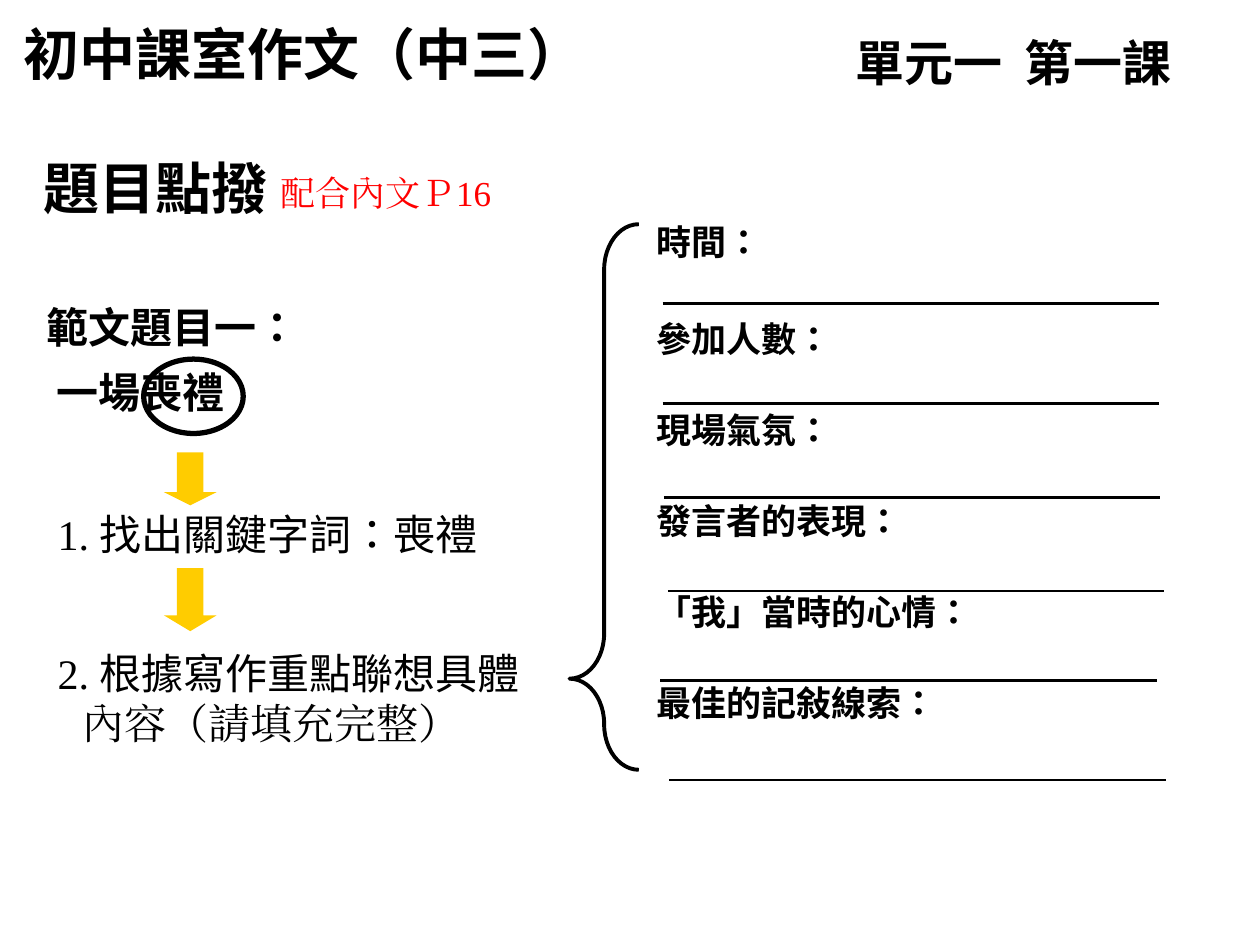
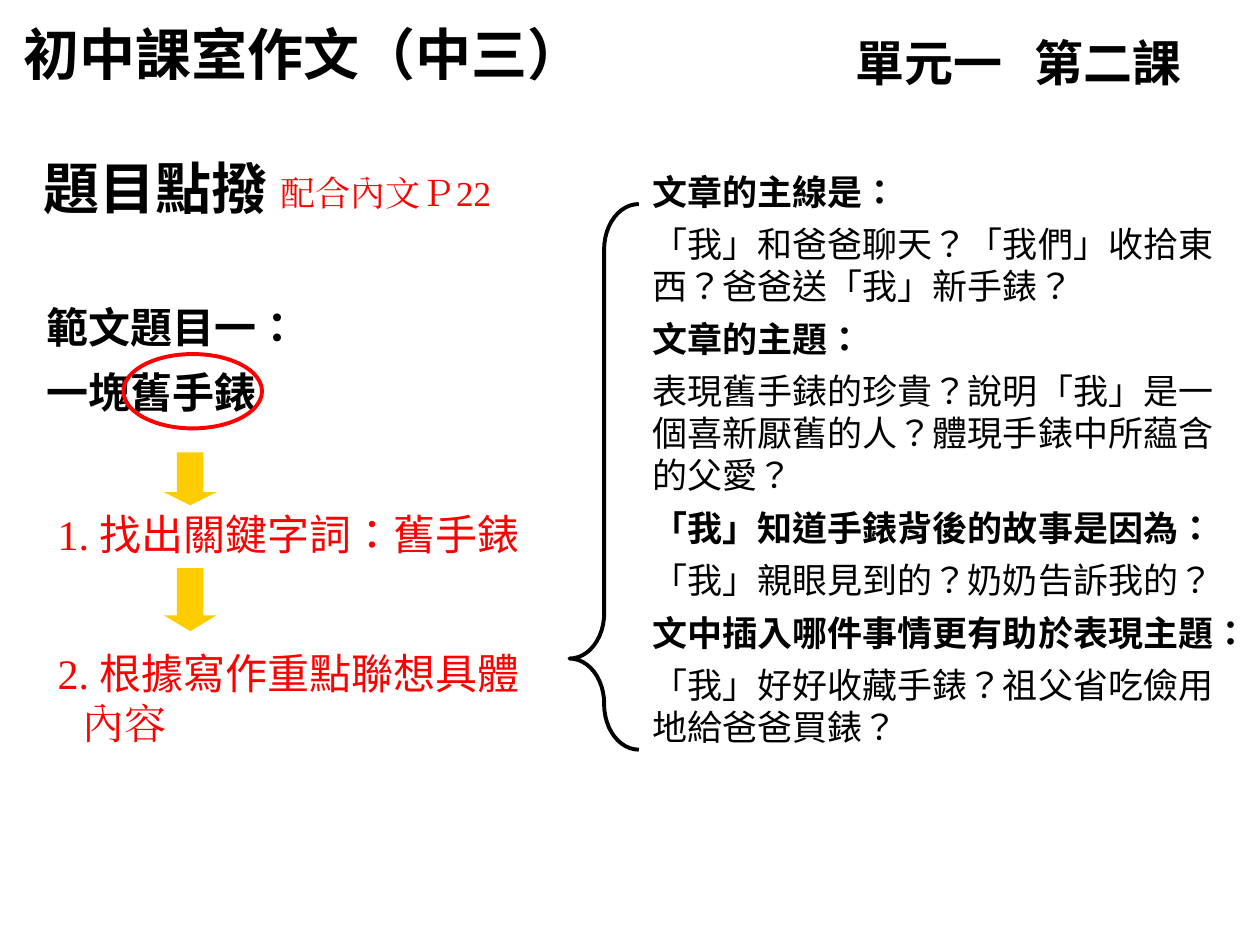
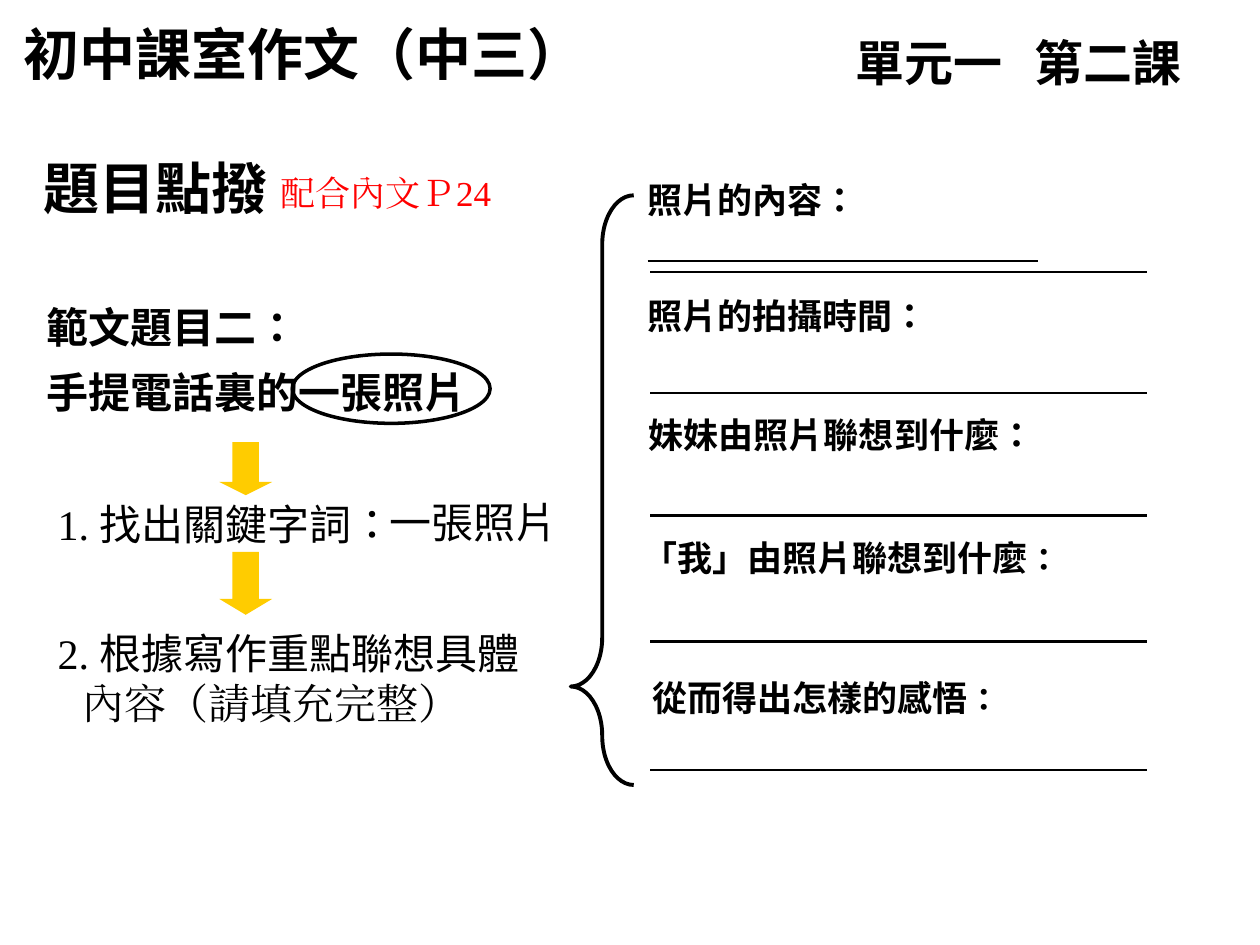
from lxml import etree
from pptx import Presentation
from pptx.dml.color import RGBColor
from pptx.enum.lang import MSO_LANGUAGE_ID
from pptx.enum.shapes import MSO_CONNECTOR, MSO_SHAPE
from pptx.enum.text import PP_ALIGN
from pptx.oxml.ns import qn
from pptx.util import Inches, Pt

# Enum members
OVAL = MSO_SHAPE.OVAL
DOWN = MSO_SHAPE.DOWN_ARROW
BRACE = MSO_SHAPE.LEFT_BRACE
STRAIGHT = MSO_CONNECTOR.STRAIGHT
CENTER = PP_ALIGN.CENTER
CHINESE = MSO_LANGUAGE_ID.TRADITIONAL_CHINESE

# Shared style
BLACK, RED, GOLD = "000000", "FF0000", "FFCC00"
SANS, SERIF, HEAD, TITLE, CJK = (
    "DejaVu Sans", "Times New Roman", "Roboto", "Arial", "Noto Sans CJK TC")
LEADING = 1.2


def rgb(code):
    return RGBColor.from_string(code)


def style(run, size, font, color, bold):
    face = run.font
    face.size, face.bold = Pt(size), bold
    face.color.rgb = rgb(color)
    face.language_id = CHINESE
    face.name = font
    east = etree.SubElement(face._element, qn("a:ea"))
    east.set("typeface", font)


def write(slide, box, lines, size, font=SANS, color=BLACK, bold=False,
          pitch=None):
    """Add a text box with one paragraph per line; return the paragraphs."""
    frame = slide.shapes.add_textbox(*map(Inches, box)).text_frame
    frame.word_wrap = True
    frame.text = "\n".join(lines)
    for para in frame.paragraphs:
        para.line_spacing = Pt(pitch or size * LEADING)
        for run in para.runs:
            style(run, size, font, color, bold)
    return frame.paragraphs


def indent(para, width):
    para._p.get_or_add_pPr().set("marL", str(Inches(width)))


def shape(slide, kind, box, fill=None, line=None, width=0, adjust=()):
    item = slide.shapes.add_shape(kind, *map(Inches, box))
    item.shadow.inherit = False
    if fill:
        item.fill.solid()
        item.fill.fore_color.rgb = rgb(fill)
    else:
        item.fill.background()
    if line:
        item.line.color.rgb = rgb(line)
        item.line.width = Pt(width)
    else:
        item.line.fill.background()
    for i, value in enumerate(adjust):
        item.adjustments[i] = value


def rule(slide, left, top, length=3.94, width=1.5):
    line = slide.shapes.add_connector(
        STRAIGHT, *map(Inches, (left, top, left + length, top)))
    line.line.color.rgb = rgb(BLACK)
    line.line.width = Pt(width)
    etree.SubElement(line._element.spPr, qn("a:effectLst"))


def header(slide, lesson, tab, page):
    write(slide, (0.09, 0.11, 5.22, 0.63), ["初中課室作文（中三）"], 32, HEAD,
          bold=True)
    write(slide, (0.25, 1.17, 3.08, 0.63), ["題目點撥"], 32, TITLE, bold=True)
    unit = write(slide, (6.69, 0.21, 3.35, 0.57), [f"單元一\t{lesson}"], 28,
                 HEAD, bold=True)[0]
    tabs = etree.SubElement(unit._p.get_or_add_pPr(), qn("a:tabLst"))
    etree.SubElement(tabs, qn("a:tab"), pos=str(Inches(tab)), algn="l")
    write(slide, (2.13, 1.31, 2.47, 0.43), [f"配合內文Ｐ{page}"], 20, SERIF,
          RED)


def topic(slide, label, title, oval, color, width):
    """Essay title with its key word circled."""
    paras = write(slide, (0.27, 2.22, 5, 1.14), [label, title], 24, bold=True,
                  pitch=37.5)
    shape(slide, OVAL, oval, line=color, width=width)
    return paras


def step(slide, top, number, lines, color):
    paras = write(slide, (0.36, top, 4.41, 0.5), [number, *lines[1:]], 24,
                  SERIF, color)
    style(paras[0].add_run(), 24, SANS, color, False)
    paras[0].runs[1].text = lines[0]
    for para in paras[1:]:
        indent(para, 0.2)
        para.runs[0].font.name = SANS


def steps(slide, word, tail, tops=(3.99, 5.09), arrows=(3.59, 4.51),
          left=1.3, color=BLACK):
    """Two numbered steps, each below an arrow."""
    for top, height, head in zip(arrows, (0.42, 0.5), (0.25, 0.3)):
        shape(slide, DOWN, (left, top, 0.42, height), GOLD, adjust=(0.5, head))
    step(slide, tops[0], "1. ", [f"找出關鍵字詞：{word}"], color)
    step(slide, tops[1], "2. ", ["根據寫作重點聯想具體", tail], color)


def brace(slide, box, curve):
    shape(slide, BRACE, box, line=BLACK, width=2.25, adjust=(curve, 0.833))


def funeral(slide):
    header(slide, "第一課", 1.34, 16)
    paras = topic(slide, "範文題目一：", "一場喪禮", (1.14, 2.85, 0.79, 0.59),
                  BLACK, 3)
    indent(paras[1], 0.08)
    steps(slide, "喪禮", "內容（請填充完整）")
    brace(slide, (4.52, 1.78, 0.55, 4.33), 0.652)
    prompts = write(slide, (5.11, 1.7, 4.38, 4.21), [
        "時間：", "參加人數：", "現場氣氛：", "發言者的表現：",
        "「我」當時的心情：", "最佳的記敍線索："], 20, CJK, bold=True)
    for i, para in enumerate(prompts[1:]):
        para.space_before = Pt(28 if i else 31.5)
    for left, top in ((5.26, 2.41), (5.26, 3.2), (5.27, 3.95), (5.3, 4.69),
                      (5.24, 5.4), (5.31, 6.19)):
        rule(slide, left, top)


def watch(slide):
    header(slide, "第二課", 1.42, 22)
    topic(slide, "範文題目一：", "一塊舊手錶", (0.98, 2.81, 1.1, 0.59), RED,
          2.25)
    steps(slide, "舊手錶", "內容", color=RED)
    brace(slide, (4.52, 1.62, 0.55, 4.33), 0.652)
    paras = write(slide, (5.08, 1.3, 4.67, 6.02), [
        "文章的主線是：",
        "「我」和爸爸聊天？「我們」收拾東西？爸爸送「我」新手錶？",
        "文章的主題：",
        "表現舊手錶的珍貴？說明「我」是一個喜新厭舊的人？體現手錶中所藴含的父愛？",
        "「我」知道手錶背後的故事是因為：",
        "「我」親眼見到的？奶奶告訴我的？",
        "文中插入哪件事情更有助於表現主題：",
        "「我」好好收藏手錶？祖父省吃儉用地給爸爸買錶？"], 20)
    for para in paras[1:]:
        para.space_before = Pt(6)
    for para in paras[::2]:
        para.runs[0].font.bold = True
        para.runs[0].font.name = CJK


def photo(slide):
    header(slide, "第二課", 1.42, 24)
    topic(slide, "範文題目二：", "手提電話裏的一張照片",
          (2.32, 2.81, 1.57, 0.55), BLACK, 2)
    steps(slide, "", "內容（請填充完整）", (3.91, 4.93), (3.51, 4.38), 1.74)
    answer = write(slide, (2.77, 3.89, 1.97, 0.5), ["一張照片"], 24)[0]
    answer.alignment = CENTER
    brace(slide, (4.53, 1.55, 0.5, 4.68), 0.779)
    # Prompts; the last two end in a smaller colon
    for left, top, label, colon in (
            (5.04, 1.37, "照片的內容：", ""),
            (5.04, 2.29, "照片的拍攝時間：", ""),
            (5.05, 3.23, "妹妹由照片聯想到什麼：", ""),
            (5, 4.21, "「我」由照片聯想到什麼", "："),
            (5.08, 5.32, "從而得出怎樣的感悟", "：")):
        para = write(slide, (left, top, 4.5, 0.43), [label], 20, bold=True)[0]
        if colon:
            run = para.add_run()
            run.text = colon
            style(run, 18, TITLE, BLACK, True)
    # Answer lines
    rule(slide, 5.14, 2.07, 3.1, 1)
    for top in (2.16, 3.12, 4.09, 5.09, 6.11):
        rule(slide, 5.16, top)


def main():
    deck = Presentation()
    deck.slide_width, deck.slide_height = Inches(10), Inches(7.5)
    for draw in (funeral, watch, photo):
        draw(deck.slides.add_slide(deck.slide_layouts[6]))
    deck.save("out.pptx")


if __name__ == "__main__":
    main()
